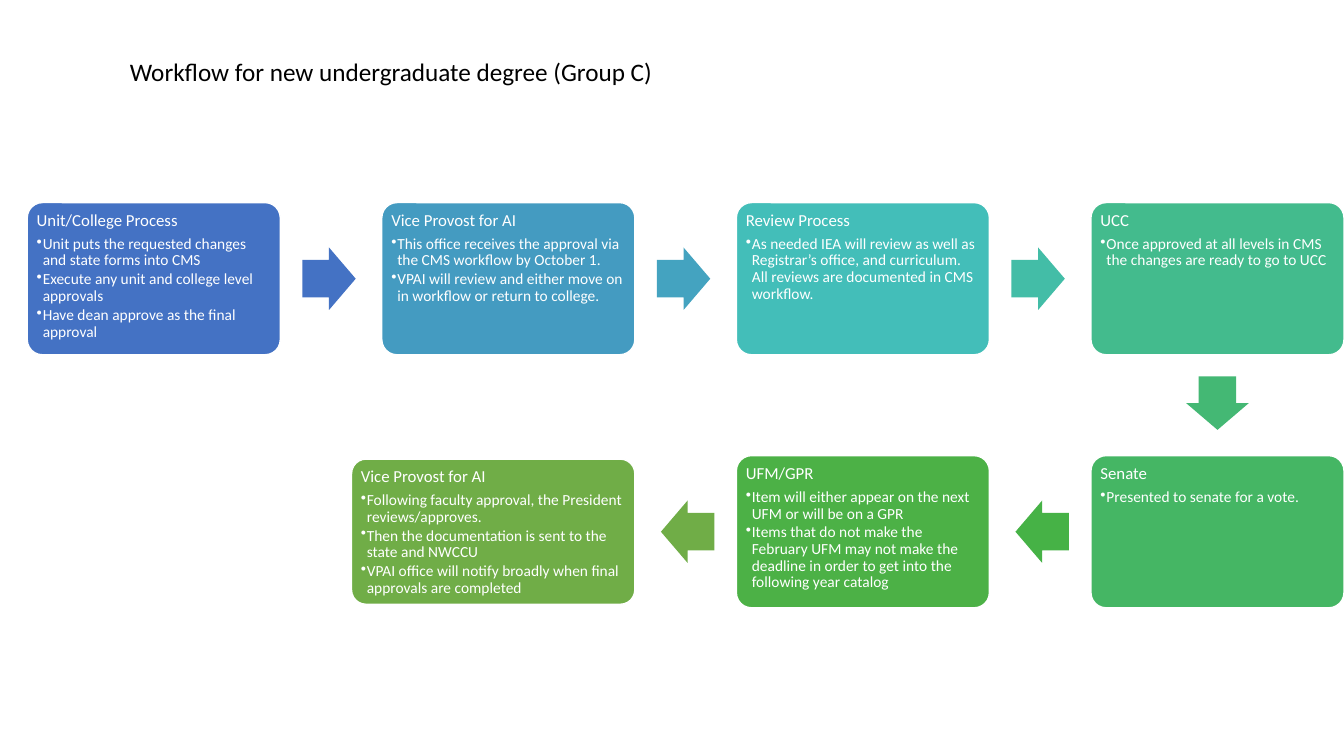
import pptx
import pptx.dml.color
import pptx.enum.shapes
import pptx.enum.text
import pptx.oxml
import pptx.oxml.ns
import pptx.util

INCH = pptx.util.Inches
SHAPE = pptx.enum.shapes.MSO_SHAPE

THEME = {
    "font": "Calibri",
    "title": {"size": 18, "color": "000000"},
    "heading": {"size": 12, "color": "FFFFFF", "after": 4.2},
    "bullet": {"size": 11, "color": "FFFFFF", "after": 1.65},
    "outline": "FFFFFF",
    "indent": 0.06,
    "inset": 0.05,
}

# Grid of steps: four columns from the left margin to the slide's right edge
SLIDE_W, SLIDE_H = 13.33, 7.5
LEFT, TOP = 0.27, 2.01
STEP_W, STEP_H = 2.51, 1.51
PITCH_X, PITCH_Y = (SLIDE_W - LEFT - STEP_W) / 3, 2.51
ARROW_W, ARROW_H, ARROW_SHIFT = 0.53, 0.62, 0.02
ROTATION = {(1, 0): 0, (0, 1): 90, (-1, 0): 180}

# Column, row, width, height, colour, colour of the arrow to the next step, texts
STEPS = [
    (0, 0, STEP_W, STEP_H, "4472C4", "4472C4", "Unit/College Process", [
        "Unit puts the requested changes and state forms into CMS",
        "Execute any unit and college level approvals",
        "Have dean approve as the final approval"]),
    (1, 0, STEP_W, STEP_H, "449BC1", "44A3C0", "Vice Provost for AI", [
        "This office receives the approval via the CMS workflow by October 1.",
        "VPAI will review and either move on in workflow or return to college."]),
    (2, 0, STEP_W, STEP_H, "43BEB9", "43BDA7", "Review Process", [
        "As needed IEA will review as well as Registrar’s office, and curriculum. "
        "All reviews are documented in CMS workflow."]),
    (3, 0, STEP_W, STEP_H, "43BB8D", "44B874", "UCC", [
        "Once approved at all levels in CMS the changes are ready to go to UCC"]),
    (3, 1, STEP_W, STEP_H, "45B664", "46B246", "Senate", [
        "Presented to senate for a vote."]),
    (2, 1, STEP_W, STEP_H, "4CB146", "70AD47", "UFM/GPR", [
        "Item will either appear on the next UFM or will be on a GPR",
        "Items that do not make the February UFM may not make the deadline "
        "in order to get into the following year catalog"]),
    (1, 1, 2.81, 1.44, "70AD47", None, "Vice Provost for AI", [
        "Following faculty approval, the President reviews/approves.",
        "Then the documentation is sent to the state and NWCCU",
        "VPAI office will notify broadly when final approvals are completed"]),
]


def add_block(kind, x, y, width, height, color, adjustments):
    block = slide.shapes.add_shape(kind, INCH(x), INCH(y), INCH(width), INCH(height))
    block.shadow.inherit = False
    block.fill.solid()
    block.fill.fore_color.rgb = pptx.dml.color.RGBColor.from_string(color)
    for index, value in enumerate(adjustments):
        block.adjustments[index] = value
    return block


def write(paragraph, text, style):
    paragraph.alignment = pptx.enum.text.PP_ALIGN.LEFT
    run = paragraph.add_run()
    run.text = text
    for attribute, value in {"name": THEME["font"],
                             "size": pptx.util.Pt(style["size"])}.items():
        setattr(run.font, attribute, value)
    run.font.color.rgb = pptx.dml.color.RGBColor.from_string(style["color"])
    if "after" in style:
        paragraph.line_spacing = 0.9
        paragraph.space_after = pptx.util.Pt(style["after"])


presentation = pptx.Presentation()
presentation.slide_width, presentation.slide_height = INCH(SLIDE_W), INCH(SLIDE_H)
slide = presentation.slides.add_slide(presentation.slide_layouts[6])

# Steps with their headings and bullets
for column, row, width, height, color, _, heading, bullets in STEPS:
    right = LEFT + column * PITCH_X + STEP_W
    middle = TOP + row * PITCH_Y + STEP_H / 2
    step = add_block(SHAPE.ROUNDED_RECTANGLE, right - width, middle - height / 2,
                     width, height, color, [0.1])
    step.line.color.rgb = pptx.dml.color.RGBColor.from_string(THEME["outline"])
    step.line.width = pptx.util.Pt(1)
    frame = step.text_frame
    frame_format = {"word_wrap": True, "vertical_anchor": pptx.enum.text.MSO_ANCHOR.TOP}
    for side in ("left", "top", "right", "bottom"):
        frame_format["margin_" + side] = INCH(THEME["inset"])
    for attribute, value in frame_format.items():
        setattr(frame, attribute, value)
    write(frame.paragraphs[0], heading, THEME["heading"])
    for bullet in bullets:
        item = frame.add_paragraph()
        item.level = 1
        write(item, bullet, THEME["bullet"])
        properties = item._p.get_or_add_pPr()
        properties.set("marL", str(INCH(THEME["indent"])))
        properties.set("indent", str(-INCH(THEME["indent"])))
        properties.append(pptx.oxml.parse_xml(
            f'<a:buChar {pptx.oxml.ns.nsdecls("a")} char="•"/>'))

# Arrows halfway between neighbouring steps, nudged back towards the earlier one
for current, following in zip(STEPS, STEPS[1:]):
    column, row = current[:2]
    across, down = following[0] - column, following[1] - row
    center_x = LEFT + STEP_W / 2 + (column + across / 2) * PITCH_X - across * ARROW_SHIFT
    center_y = TOP + STEP_H / 2 + (row + down / 2) * PITCH_Y - down * ARROW_SHIFT
    arrow = add_block(SHAPE.RIGHT_ARROW, center_x - ARROW_W / 2, center_y - ARROW_H / 2,
                      ARROW_W, ARROW_H, current[5], [0.6, 0.5])
    arrow.line.fill.background()
    arrow.rotation = ROTATION[across, down]

# Title
title = slide.shapes.add_textbox(INCH(1.19), INCH(0.51), INCH(10.97), INCH(0.71))
title.text_frame.word_wrap = True
write(title.text_frame.paragraphs[0],
      "Workflow for new undergraduate degree (Group C)", THEME["title"])

presentation.save("out.pptx")
